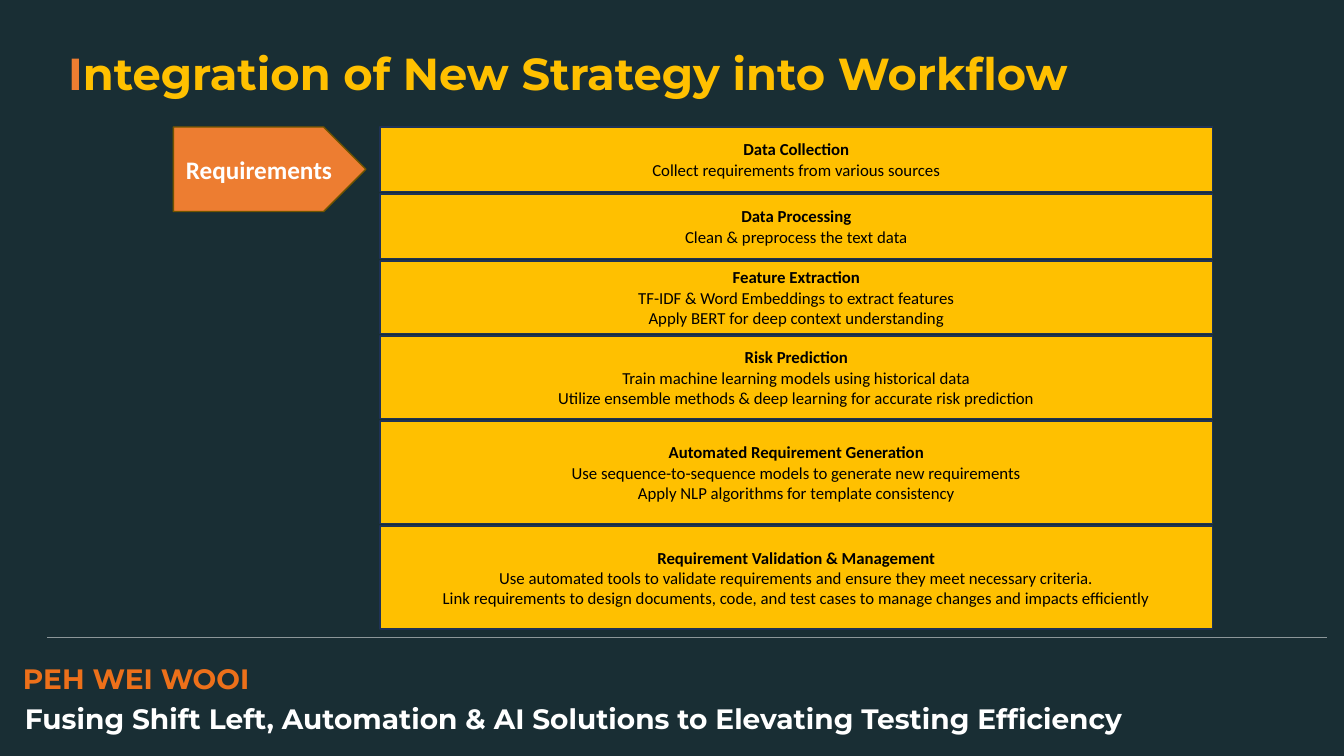
from lxml import etree
from pptx import Presentation
from pptx.dml.color import RGBColor
from pptx.enum.shapes import MSO_CONNECTOR, MSO_SHAPE
from pptx.enum.text import MSO_ANCHOR, PP_ALIGN
from pptx.oxml.ns import qn
from pptx.util import Cm, Pt

RECTANGLE, PENTAGON = MSO_SHAPE.RECTANGLE, MSO_SHAPE.PENTAGON
STRAIGHT = MSO_CONNECTOR.STRAIGHT
MIDDLE, CENTER = MSO_ANCHOR.MIDDLE, PP_ALIGN.CENTER

DARK = RGBColor(0x19, 0x2E, 0x34)
NAVY = RGBColor(0x1E, 0x32, 0x56)
GOLD = RGBColor(0xFF, 0xC0, 0x00)
ORANGE = RGBColor(0xED, 0x7D, 0x31)
DEEP_ORANGE = RGBColor(0xED, 0x70, 0x1A)
BROWN = RGBColor(0x70, 0x54, 0x00)
GREY = RGBColor(0x8C, 0x96, 0x99)
WHITE = RGBColor(0xFF, 0xFF, 0xFF)
BLACK = RGBColor(0x00, 0x00, 0x00)

TITLE = [("I", ORANGE), ("ntegration of New Strategy into Workflow", GOLD)]
AUTHOR = [("PEH WEI WOOI", DEEP_ORANGE)]
TOPIC = [("Fusing Shift Left, Automation & AI Solutions to Elevating Testing Efficiency", WHITE)]
PHASE = "Requirements"

# Height in cm, heading, detail lines
STEPS = [
    (1.63, "Data Collection", ["Collect requirements from various sources"]),
    (1.63, "Data Processing", ["Clean & preprocess the text data"]),
    (1.83, "Feature Extraction", [
        "TF-IDF & Word Embeddings to extract features",
        "Apply BERT for deep context understanding"]),
    (2.08, "Risk Prediction", [
        "Train machine learning models using historical data",
        "Utilize ensemble methods & deep learning for accurate risk prediction"]),
    (2.59, "Automated Requirement Generation", [
        "Use sequence-to-sequence models to generate new requirements",
        "Apply NLP algorithms for template consistency"]),
    (2.59, "Requirement Validation & Management", [
        "Use automated tools to validate requirements and ensure they meet necessary criteria.",
        "Link requirements to design documents, code, and test cases"
        " to manage changes and impacts efficiently"]),
]
STEP_LEFT, STEP_TOP, STEP_WIDTH, STEP_GAP = 9.58, 3.2, 20.98, 0.06


def add_span(para, text, font_name, size, color, bold=True):
    span = para.add_run()
    span.text = text
    span.font.name = font_name
    span.font.size = Pt(size)
    span.font.bold = bold
    span.font.color.rgb = color


def add_heading(page, place, spans, size, line_spacing=1.0):
    box = page.shapes.add_textbox(*map(Cm, place))
    box.text_frame.word_wrap = True
    para = box.text_frame.paragraphs[0]
    para.line_spacing = line_spacing
    for text, color in spans:
        add_span(para, text, "Montserrat", size, color)


def add_block(page, kind, place, fill, outline, lines, size, color):
    """Draw a filled shape with centred lines, the first of them bold."""
    block = page.shapes.add_shape(kind, *map(Cm, place))
    block.shadow.inherit = False
    block.fill.solid()
    block.fill.fore_color.rgb = fill
    block.line.color.rgb = outline
    block.line.width = Pt(1)
    frame = block.text_frame
    frame.word_wrap = True
    frame.vertical_anchor = MIDDLE
    for index, text in enumerate(lines):
        para = frame.add_paragraph() if index else frame.paragraphs[0]
        para.alignment = CENTER
        add_span(para, text, "Calibri", size, color, bold=index == 0)


def add_divider(page):
    divider = page.shapes.add_connector(STRAIGHT, Cm(1.19), Cm(16.05), Cm(33.43), Cm(16.05))
    divider.line.color.rgb = GREY
    divider.line.width = Pt(0.5)
    etree.SubElement(divider._element.spPr, qn("a:effectLst"))


def main():
    deck = Presentation()
    deck.slide_width, deck.slide_height = Cm(33.87), Cm(19.05)
    page = deck.slides.add_slide(deck.slide_layouts[6])
    page.background.fill.solid()
    page.background.fill.fore_color.rgb = DARK

    add_divider(page)
    add_heading(page, (0.33, 16.64, 12.09, 0.89), AUTHOR, 20, 0.9)
    add_heading(page, (0.38, 17.65, 28.8, 0.61), TOPIC, 20, 0.9)
    add_heading(page, (1.47, 1.04, 27.33, 1.63), TITLE, 32)

    top = STEP_TOP
    for height, heading, details in STEPS:
        add_block(page, RECTANGLE, (STEP_LEFT, top, STEP_WIDTH, height),
                  GOLD, NAVY, [heading, *details], 12, BLACK)
        top += height + STEP_GAP
    add_block(page, PENTAGON, (4.37, STEP_TOP, 4.85, 2.13), ORANGE, BROWN, [PHASE], 18, WHITE)

    deck.save("out.pptx")


if __name__ == "__main__":
    main()
